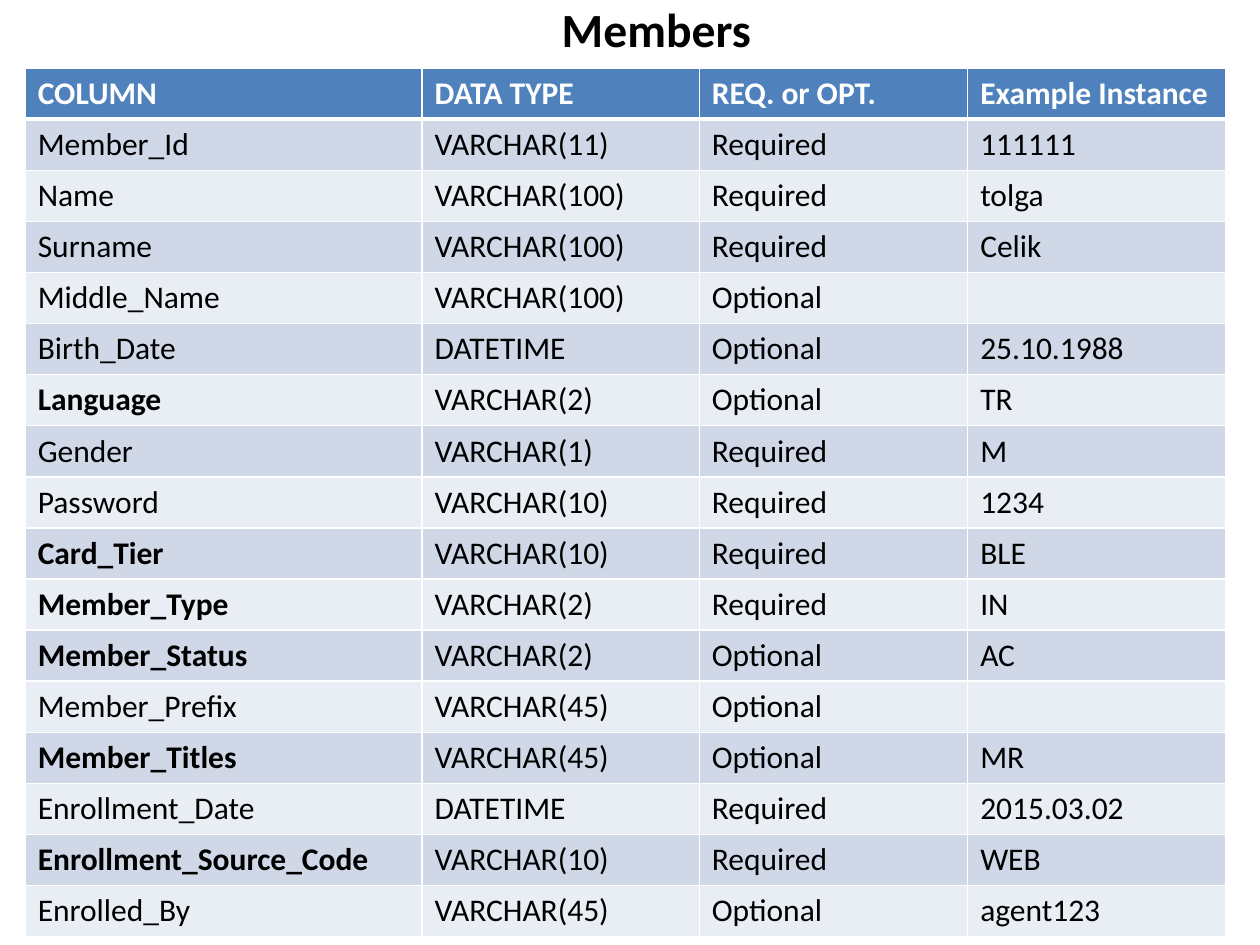
from lxml.etree import SubElement
from pptx import Presentation
from pptx.dml.color import RGBColor as RGB
from pptx.enum.text import MSO_ANCHOR as Anchor, PP_ALIGN as Align
from pptx.oxml.ns import qn
from pptx.util import Pt

# Content
TITLE = "Members"
HEADERS = ("COLUMN", "DATA TYPE", "REQ. or OPT.", "Example Instance")
FIELDS = [
    ("Member_Id", "VARCHAR(11)", "Required", "111111"),
    ("Name", "VARCHAR(100)", "Required", "tolga"),
    ("Surname", "VARCHAR(100)", "Required", "Celik"),
    ("Middle_Name", "VARCHAR(100)", "Optional", ""),
    ("Birth_Date", "DATETIME", "Optional", "25.10.1988"),
    ("Language", "VARCHAR(2)", "Optional", "TR"),
    ("Gender", "VARCHAR(1)", "Required", "M"),
    ("Password", "VARCHAR(10)", "Required", "1234"),
    ("Card_Tier", "VARCHAR(10)", "Required", "BLE"),
    ("Member_Type", "VARCHAR(2)", "Required", "IN"),
    ("Member_Status", "VARCHAR(2)", "Optional", "AC"),
    ("Member_Prefix", "VARCHAR(45)", "Optional", ""),
    ("Member_Titles", "VARCHAR(45)", "Optional", "MR"),
    ("Enrollment_Date", "DATETIME", "Required", "2015.03.02"),
    ("Enrollment_Source_Code", "VARCHAR(10)", "Required", "WEB"),
    ("Enrolled_By", "VARCHAR(45)", "Optional", "agent123"),
]
BOLD_FIELDS = {"Language", "Card_Tier", "Member_Type", "Member_Status",
               "Member_Titles", "Enrollment_Source_Code"}

# Theme and layout, lengths in points
THEME = dict(font="Calibri", title_size=27.2, cell_size=18,
             text="000000", header_text="FFFFFF", header_fill="4F81BD",
             bands=("D0D8E8", "E9EDF4"), border="FFFFFF",
             thin=1, thick=3)
TITLE_BOX = (133.2, 0, 483.84, 73.44)
TABLE_LEFT, TABLE_TOP = 14.4, 38.9
COL_WIDTHS = (226.8, 158.4, 153.36, 147.6)
ROW_HEIGHT = 29.17


def add_run(p, text, size, color, bold):
    r = p.add_run()
    r.text = text
    r.font.name = THEME["font"]
    r.font.size = Pt(size)
    r.font.bold = bold
    r.font.color.rgb = RGB.from_string(color)


def set_borders(cell, top, bottom):
    tc_pr = cell._tc.get_or_add_tcPr()
    thin = THEME["thin"]
    for side, width in (("L", thin), ("R", thin), ("T", top), ("B", bottom)):
        ln = SubElement(tc_pr, qn(f"a:ln{side}"), w=str(Pt(width)))
        fill = SubElement(ln, qn("a:solidFill"))
        SubElement(fill, qn("a:srgbClr"), val=THEME["border"])


def fill_cell(cell, text, row, bold):
    thin, thick = THEME["thin"], THEME["thick"]
    header = row == 0
    set_borders(cell, thick if row == 1 else thin, thick if header else thin)
    cell.fill.solid()
    fill = THEME["header_fill"] if header else THEME["bands"][(row - 1) % 2]
    cell.fill.fore_color.rgb = RGB.from_string(fill)
    p = cell.text_frame.paragraphs[0]
    if text:
        color = THEME["header_text" if header else "text"]
        add_run(p, text, THEME["cell_size"], color, bold)
    else:
        p.font.size = Pt(THEME["cell_size"])


prs = Presentation()
prs.slide_width, prs.slide_height = Pt(720), Pt(540)
s = prs.slides.add_slide(prs.slide_layouts[5])

# Title
sp = s.shapes.title
sp.left, sp.top, sp.width, sp.height = map(Pt, TITLE_BOX)
tf = sp.text_frame
tf.vertical_anchor = Anchor.TOP
tf.margin_top = 0
p = tf.paragraphs[0]
p.alignment = Align.CENTER
add_run(p, TITLE, THEME["title_size"], THEME["text"], True)

# Table of columns
rows = [HEADERS, *FIELDS]
table = s.shapes.add_table(
    len(rows), len(HEADERS), Pt(TABLE_LEFT), Pt(TABLE_TOP),
    Pt(sum(COL_WIDTHS)), Pt(ROW_HEIGHT * len(rows))).table
for col, width in zip(table.columns, COL_WIDTHS):
    col.width = Pt(width)
for i, values in enumerate(rows):
    table.rows[i].height = Pt(ROW_HEIGHT)
    for j, text in enumerate(values):
        bold = i == 0 or (j == 0 and text in BOLD_FIELDS)
        fill_cell(table.cell(i, j), text, i, bold)

prs.save("out.pptx")
